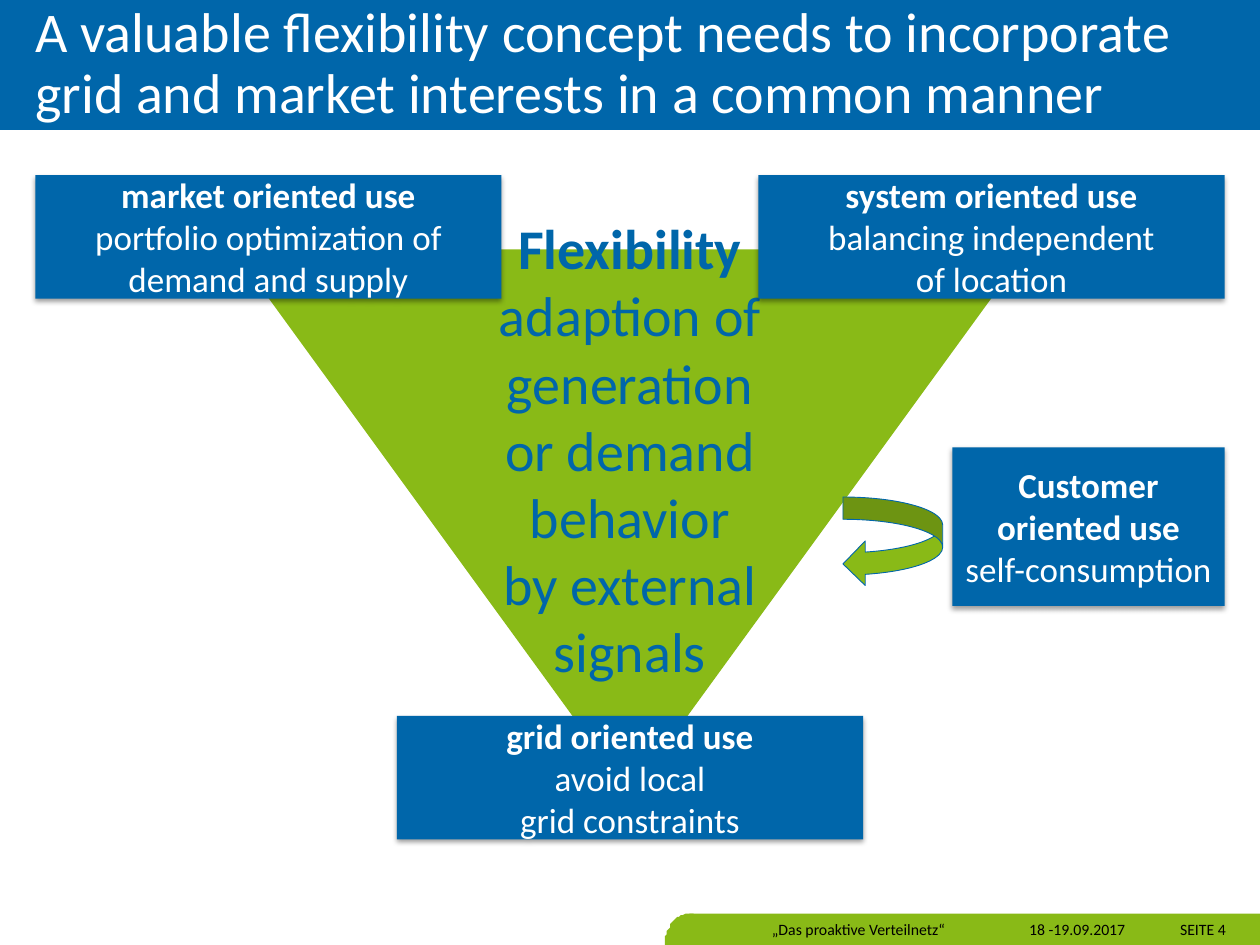
import math

from lxml import etree
from pptx import Presentation
from pptx.dml.color import RGBColor
from pptx.enum.shapes import MSO_SHAPE
from pptx.enum.text import MSO_ANCHOR, PP_ALIGN
from pptx.oxml.ns import qn
from pptx.util import Pt

RECT = MSO_SHAPE.RECTANGLE
TRIANGLE = MSO_SHAPE.ISOSCELES_TRIANGLE
CURVED_ARROW = MSO_SHAPE.CURVED_LEFT_ARROW
MIDDLE = MSO_ANCHOR.MIDDLE
LEFT, CENTER, RIGHT = PP_ALIGN.LEFT, PP_ALIGN.CENTER, PP_ALIGN.RIGHT

FONT = "Calibri"
COLORS = {"blue": "0066AA", "green": "89BA17", "white": "FFFFFF", "black": "000000"}
MARGIN = 20.2
BOX_W, BOX_H = 266.4, 70.6


def rgb(name):
    return RGBColor.from_string(COLORS[name])


def paint(sp, color):
    sp.shadow.inherit = False
    sp.fill.solid()
    sp.fill.fore_color.rgb = rgb(color)
    sp.line.fill.background()


def write(sp, text, size, color, align=CENTER, inset=(0, 0), wrap=True, heading=False):
    """Fill one paragraph; with heading, the first run is bold."""
    tf = sp.text_frame
    tf.word_wrap = wrap
    tf.vertical_anchor = MIDDLE
    tf.margin_left = tf.margin_right = Pt(inset[0])
    tf.margin_top = tf.margin_bottom = Pt(inset[1])
    p = tf.paragraphs[0]
    p.text = text
    p.alignment = align
    for i, r in enumerate(p.runs):
        r.font.name = FONT
        r.font.size = Pt(size)
        r.font.bold = heading and i == 0
        r.font.color.rgb = rgb(color)
    return p


def add_shape(s, kind, x, y, w, h, color):
    sp = s.shapes.add_shape(kind, Pt(x), Pt(y), Pt(w), Pt(h))
    paint(sp, color)
    return sp


def add_label(s, x, y, w, h, text, size, color, **style):
    sp = s.shapes.add_textbox(Pt(x), Pt(y), Pt(w), Pt(h))
    write(sp, text, size, color, wrap=False, **style)


def add_use_box(s, x, y, w, h, text):
    """Blue box with a soft shadow below it."""
    sp = add_shape(s, RECT, x, y, w, h, "blue")
    effects = sp.element.spPr.find(qn("a:effectLst"))
    shadow = etree.SubElement(effects, qn("a:outerShdw"), blurRad=str(Pt(3.1)),
                              dist=str(Pt(1.6)), dir="5400000", rotWithShape="0")
    color = etree.SubElement(shadow, qn("a:srgbClr"), val=COLORS["black"])
    etree.SubElement(color, qn("a:alpha"), val="38000")
    write(sp, text, 20, "white", heading=True)


def add_title(s, text):
    sp = s.shapes.title
    sp.left, sp.top, sp.width, sp.height = Pt(0), Pt(0), Pt(720), Pt(74.2)
    sp.fill.solid()
    sp.fill.fore_color.rgb = rgb("blue")
    p = write(sp, text, 32, "white", align=LEFT, inset=(MARGIN, 2.9))
    p.line_spacing = 0.9


def add_footer(s):
    # Half ellipse rounding the left end of the bar
    cx, base, rx, ry = 394, 540, 14, 18
    arc = [(cx - rx * math.cos(math.radians(a)), base - ry * math.sin(math.radians(a)))
           for a in range(0, 181, 5)]
    fb = s.shapes.build_freeform(*arc[0], scale=Pt(1))
    fb.add_line_segments(arc[1:], close=True)
    paint(fb.convert_to_shape(), "green")
    add_shape(s, RECT, cx, base - ry, 720 - cx, ry, "green")

    for x, w, text, align in (
        (cx, 193, "„Das proaktive Verteilnetz“", CENTER),
        (587, 57, "18 -19.09.2017", CENTER),
        (644, 56.5, "SEITE 4", RIGHT),
    ):
        add_label(s, x, 522.4, w, 17, text, 9, "black", align=align)


def main():
    prs = Presentation()
    prs.slide_width, prs.slide_height = Pt(720), Pt(540)
    s = prs.slides.add_slide(prs.slide_layouts[5])

    add_title(s, "A valuable flexibility concept needs to incorporate "
                 "grid and market interests in a common manner")
    add_footer(s)

    # Flexibility triangle pointing down
    triangle = add_shape(s, TRIANGLE, 133.2, 142.5, 453.6, 311.8, "green")
    triangle.rotation = 180
    add_label(s, 278, 213, 164, 87,
              "Flexibility\vadaption of generation\vor demand behavior\vby external\vsignals",
              32, "blue", inset=(7.2, 3.6), heading=True)

    # Uses at the three corners
    right = 720 - MARGIN
    for x, y, text in (
        (MARGIN, 100, "market oriented use\vportfolio optimization of\vdemand and supply"),
        (right - BOX_W, 100, "system oriented use\vbalancing independent\vof location"),
        (360 - BOX_W / 2, 409, "grid oriented use\vavoid local\vgrid constraints"),
    ):
        add_use_box(s, x, y, BOX_W, BOX_H, text)

    # Customer use with its loop arrow
    arrow = add_shape(s, CURVED_ARROW, 481.7, 284, 57, 51, "green")
    arrow.line.color.rgb = rgb("blue")
    arrow.line.width = Pt(0.5)
    add_use_box(s, right - 155.6, 255.6, 155.6, 90.7,
                "Customer oriented use\vself-consumption")

    prs.save("out.pptx")


if __name__ == "__main__":
    main()
